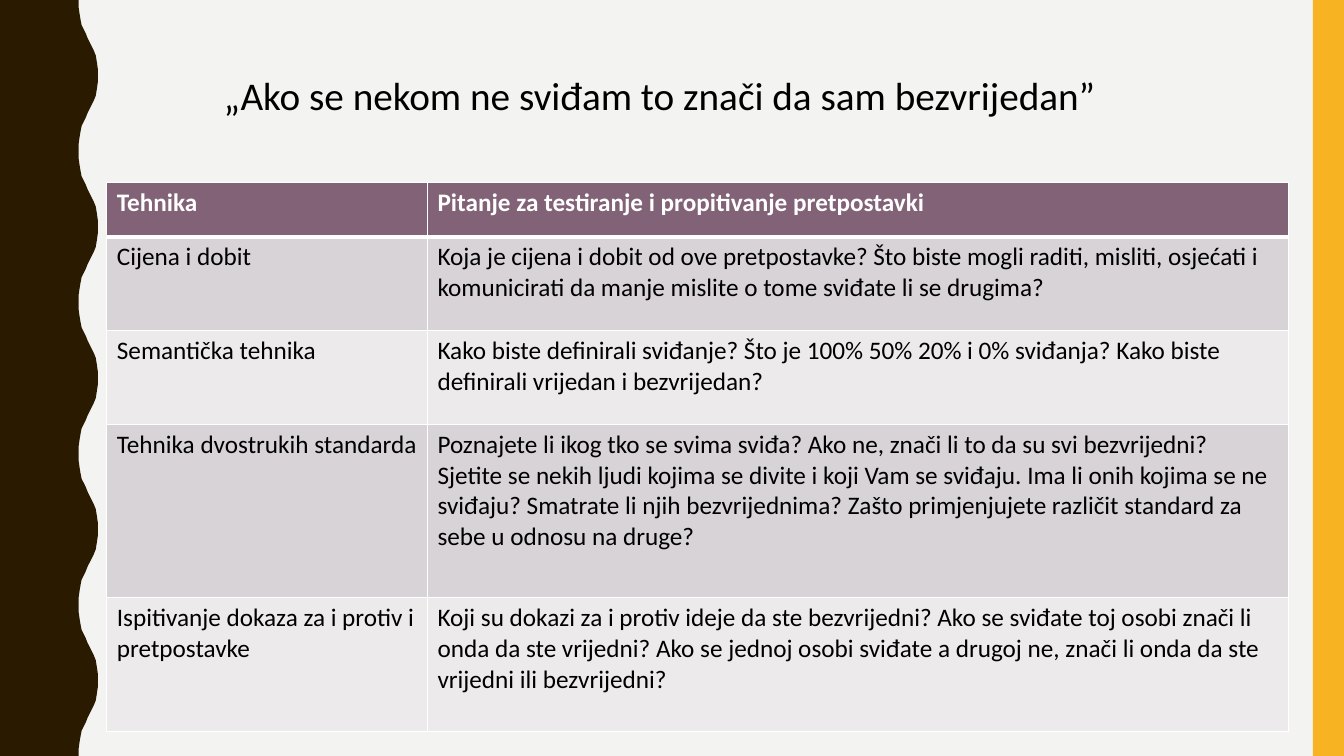
from dataclasses import dataclass

from lxml.etree import SubElement
from pptx import Presentation
from pptx.dml.color import RGBColor
from pptx.enum.shapes import MSO_SHAPE as Preset
from pptx.enum.text import MSO_AUTO_SIZE as AutoSize, PP_ALIGN as Align
from pptx.oxml.ns import qn
from pptx.shapes.autoshape import Shape
from pptx.slide import Slide
from pptx.table import _Cell as Cell
from pptx.text.text import TextFrame
from pptx.util import Inches, Pt

BACKGROUND = RGBColor(0xF3, 0xF3, 0xF2)
BROWN = RGBColor(0x2A, 0x1A, 0x00)
YELLOW = RGBColor(0xF8, 0xB3, 0x23)
PLUM = RGBColor(0x82, 0x62, 0x76)
BAND_DARK = RGBColor(0xD8, 0xD3, 0xD6)
BAND_LIGHT = RGBColor(0xED, 0xEA, 0xEC)
WHITE = RGBColor(0xFF, 0xFF, 0xFF)
BLACK = RGBColor(0x00, 0x00, 0x00)

SLIDE_WIDTH, SLIDE_HEIGHT = 13.33, 7.5
WAVE_PERIOD = 1.5
WAVE_COUNT = 5
HALF_WAVE = [
    (0.78, 0), (0.78, 0.07), (0.79, 0.14), (0.8, 0.2), (0.81, 0.25),
    (0.83, 0.29), (0.85, 0.33), (0.87, 0.38), (0.89, 0.42), (0.91, 0.46),
    (0.93, 0.5), (0.95, 0.55), (0.96, 0.61), (0.97, 0.68), (0.97, 0.75),
]
COLUMN_WIDTHS = (3.18, 8.54)


@dataclass(frozen=True)
class TableRow:
    technique: str
    question: str
    height: float


ROWS = [
    TableRow("Tehnika", "Pitanje za testiranje i propitivanje pretpostavki", 0.54),
    TableRow(
        "Cijena i dobit",
        "Koja je cijena i dobit od ove pretpostavke? Što biste mogli raditi, misliti, "
        "osjećati i komunicirati da manje mislite o tome sviđate li se drugima?",
        0.93,
    ),
    TableRow(
        "Semantička tehnika",
        "Kako biste definirali sviđanje? Što je 100% 50% 20% i 0% sviđanja? "
        "Kako biste definirali vrijedan i bezvrijedan?",
        0.93,
    ),
    TableRow(
        "Tehnika dvostrukih standarda",
        "Poznajete li ikog tko se svima sviđa? Ako ne, znači li to da su svi bezvrijedni? "
        "Sjetite se nekih ljudi kojima se divite i koji Vam se sviđaju. Ima li onih kojima "
        "se ne sviđaju? Smatrate li njih bezvrijednima? Zašto primjenjujete različit "
        "standard za sebe u odnosu na druge?",
        1.72,
    ),
    TableRow(
        "Ispitivanje dokaza za i protiv i pretpostavke",
        "Koji su dokazi za i protiv ideje da ste bezvrijedni? Ako se sviđate toj osobi "
        "znači li onda da ste vrijedni? Ako se jednoj osobi sviđate a drugoj ne, znači li "
        "onda da ste vrijedni ili bezvrijedni?",
        1.33,
    ),
]


def write_text(frame: TextFrame, text: str, *, size: int = 18, color: RGBColor = BLACK,
               bold: bool = False, align: Align = Align.LEFT) -> None:
    frame.word_wrap = True
    paragraph = frame.paragraphs[0]
    paragraph.alignment = align
    run = paragraph.add_run()
    run.text = text
    run.font.name = "Calibri"
    run.font.size = Pt(size)
    run.font.bold = bold
    run.font.color.rgb = color


def paint(shape: Shape, color: RGBColor) -> None:
    shape.shadow.inherit = False
    shape.fill.solid()
    shape.fill.fore_color.rgb = color
    shape.line.fill.background()


def draw_wave(slide: Slide) -> None:
    mirrored = [(x, WAVE_PERIOD - y) for x, y in reversed(HALF_WAVE[1:-1])]
    edge = [
        (x, y + wave * WAVE_PERIOD)
        for wave in range(WAVE_COUNT)
        for x, y in HALF_WAVE + mirrored
    ]
    outline = edge + [(HALF_WAVE[0][0], SLIDE_HEIGHT), (0, SLIDE_HEIGHT)]
    builder = slide.shapes.build_freeform(0, 0)
    builder.add_line_segments([(Inches(x), Inches(y)) for x, y in outline], close=True)
    paint(builder.convert_to_shape(), BROWN)


def set_borders(cell: Cell, *, top: int, bottom: int) -> None:
    properties = cell._tc.get_or_add_tcPr()
    widths = {"a:lnL": 1, "a:lnR": 1, "a:lnT": top, "a:lnB": bottom}
    for position, (tag, width) in enumerate(widths.items()):
        line = SubElement(properties, qn(tag), w=str(Pt(width)))
        fill = SubElement(line, qn("a:solidFill"))
        SubElement(fill, qn("a:srgbClr"), val=str(WHITE))
        properties.insert(position, line)


def draw_table(slide: Slide) -> None:
    table = slide.shapes.add_table(
        len(ROWS), len(COLUMN_WIDTHS), Inches(1.06), Inches(1.81),
        Inches(sum(COLUMN_WIDTHS)), Inches(sum(row.height for row in ROWS)),
    ).table
    for column, width in zip(table.columns, COLUMN_WIDTHS):
        column.width = Inches(width)
    for index, row in enumerate(ROWS):
        table.rows[index].height = Inches(row.height)
        is_header = index == 0
        band = BAND_DARK if index % 2 else BAND_LIGHT
        for column_index, text in enumerate((row.technique, row.question)):
            cell = table.cell(index, column_index)
            cell.fill.solid()
            cell.fill.fore_color.rgb = PLUM if is_header else band
            set_borders(cell, top=3 if index == 1 else 1, bottom=3 if is_header else 1)
            write_text(cell.text_frame, text, bold=is_header,
                       color=WHITE if is_header else BLACK)


def draw_title(slide: Slide) -> None:
    title = slide.shapes.add_textbox(Inches(1.36), Inches(0.66), Inches(10.36), Inches(0.57))
    write_text(title.text_frame, "„Ako se nekom ne sviđam to znači da sam bezvrijedan”",
               size=28, align=Align.CENTER)
    title.text_frame.auto_size = AutoSize.SHAPE_TO_FIT_TEXT


def main() -> None:
    presentation = Presentation()
    presentation.slide_width = Inches(SLIDE_WIDTH)
    presentation.slide_height = Inches(SLIDE_HEIGHT)
    slide = presentation.slides.add_slide(presentation.slide_layouts[6])
    slide.background.fill.solid()
    slide.background.fill.fore_color.rgb = BACKGROUND
    draw_wave(slide)
    stripe = slide.shapes.add_shape(
        Preset.RECTANGLE, Inches(13.02), 0, Inches(0.31), Inches(SLIDE_HEIGHT))
    paint(stripe, YELLOW)
    draw_table(slide)
    draw_title(slide)
    presentation.save("out.pptx")


if __name__ == "__main__":
    main()
